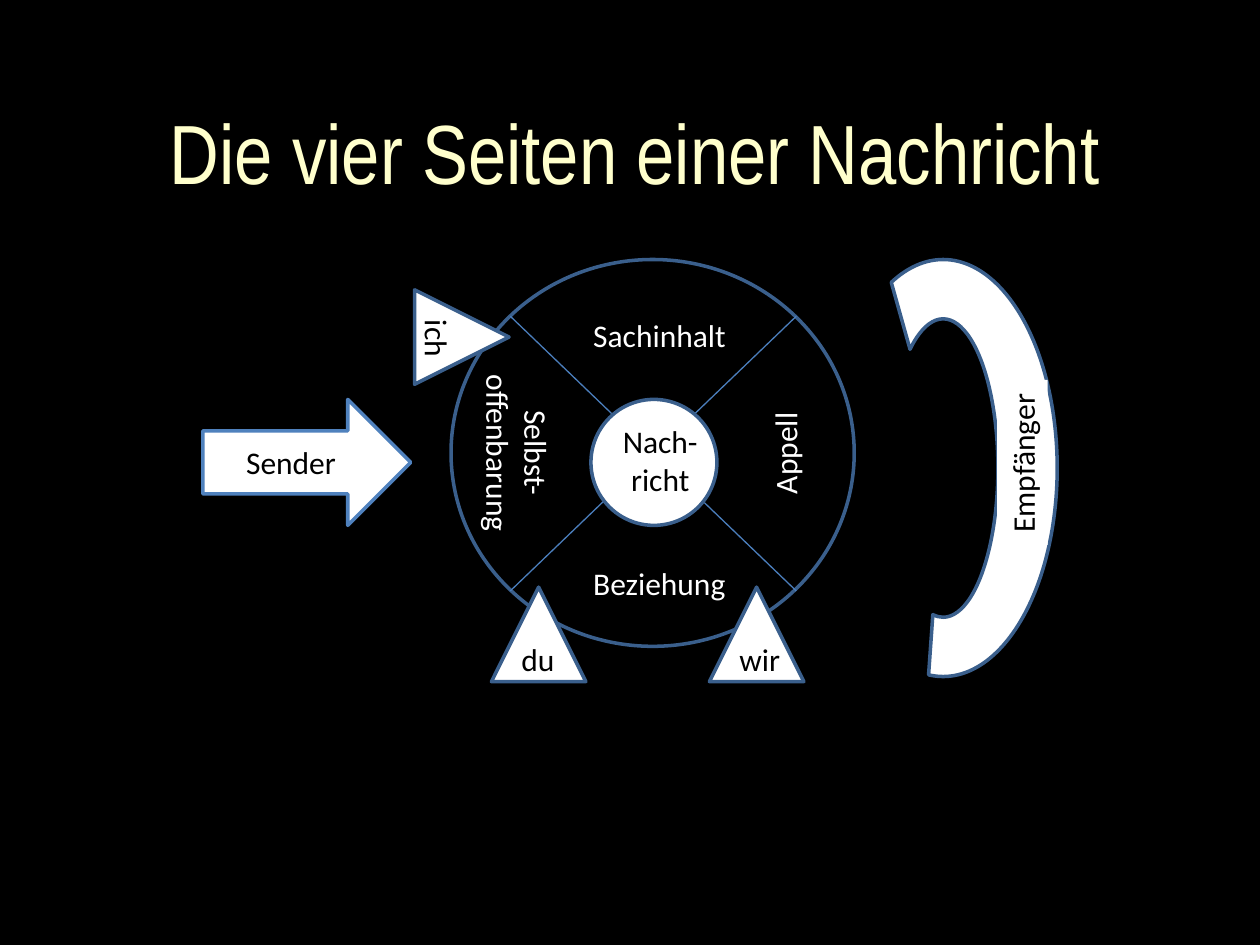
from lxml import etree
from pptx import Presentation
from pptx import util as u
from pptx.dml.color import RGBColor
from pptx.enum import shapes, text
from pptx.oxml import ns

BLACK = RGBColor(0x00, 0x00, 0x00)
WHITE = RGBColor(0xFF, 0xFF, 0xFF)
CREAM = RGBColor(0xFF, 0xFF, 0xCC)
BLUE = RGBColor(0x4F, 0x81, 0xBD)
DARK_BLUE = RGBColor(0x3A, 0x5F, 0x8C)
LINE_BLUE = RGBColor(0x4B, 0x7E, 0xBC)

deck = Presentation()
deck.slide_width, deck.slide_height = u.Inches(10), u.Inches(7.5)
page = deck.slides.add_slide(deck.slide_layouts[6])
page.background.fill.solid()
page.background.fill.fore_color.rgb = BLACK

# Grid of 100 columns by 75 rows
CELL = deck.slide_width / 100
LEFT, CENTER = text.PP_ALIGN.LEFT, text.PP_ALIGN.CENTER


def add_outline(kind, area, fill=WHITE, line=DARK_BLUE, turn=0):
    """Add a preset shape; area is column, row, columns wide, rows high."""
    shape = page.shapes.add_shape(kind, *[round(n * CELL) for n in area])
    shape.shadow.inherit = False
    shape.rotation = turn
    if fill is None:
        shape.fill.background()
    else:
        shape.fill.solid()
        shape.fill.fore_color.rgb = fill
    shape.line.color.rgb = line
    shape.line.width = u.Pt(2)
    return shape


def add_words(lines, area, color, align=LEFT, turn=0, box=None, font="Calibri", size=18):
    """Write lines into box, or into a new text box that fits its text."""
    if box is None:
        box = page.shapes.add_textbox(*[round(n * CELL) for n in area])
        box.rotation = turn
        box.text_frame.word_wrap = False
        box.text_frame.auto_size = text.MSO_AUTO_SIZE.SHAPE_TO_FIT_TEXT
    frame = box.text_frame
    for index, line in enumerate(lines):
        para = frame.add_paragraph() if index else frame.paragraphs[0]
        para.alignment = align
        span = para.add_run()
        span.text = line
        span.font.name, span.font.size = font, u.Pt(size)
        span.font.color.rgb = color
    return box


# Title
title = page.shapes.add_textbox(*[round(n * CELL) for n in (3.3, 6.7, 94.2, 12.5)])
title.text_frame.word_wrap = True
title.text_frame.vertical_anchor = text.MSO_ANCHOR.MIDDLE
add_words(["Die vier Seiten einer Nachricht"], None, CREAM, CENTER,
          box=title, font="Arial Narrow", size=48)
title.text_frame.paragraphs[0].line_spacing = 0.7

# Sender
sender = add_outline(shapes.MSO_SHAPE.RIGHT_ARROW, (16.1, 31.7, 16.5, 10), line=BLUE)
sender.text_frame.vertical_anchor = text.MSO_ANCHOR.MIDDLE
add_words(["Sender"], None, BLACK, CENTER, box=sender)

# Message circle with its two diagonals
add_outline(shapes.MSO_SHAPE.OVAL, (35.8, 20.6, 32, 30.7), fill=None)
west, east, north, south = 40.5, 63.2, 25.1, 46.9
for start, end in (((west, north), (east, south)), ((east, north), (west, south))):
    diagonal = page.shapes.add_connector(
        shapes.MSO_CONNECTOR.STRAIGHT, *[round(n * CELL) for n in start + end])
    diagonal.line.color.rgb = LINE_BLUE
    diagonal.line.width = u.Pt(0.75)
    etree.SubElement(diagonal._element.spPr, ns.qn("a:effectLst"))

# The four sides
for lines, area, align, turn in (
    (["Sachinhalt"], (46.1, 24.6, 12.7, 4), LEFT, 0),
    (["Beziehung"], (46.1, 44.3, 12.7, 4), LEFT, 0),
    (["Appell"], (58, 33.9, 8.6, 4), LEFT, 270),
    (["Selbst-", "offenbarung"], (33.7, 32.4, 14.7, 7.1), CENTER, 90),
):
    add_words(lines, area, WHITE, align, turn)

# Core
add_outline(shapes.MSO_SHAPE.OVAL, (46.9, 31.7, 10, 10))
add_words(["Nach-", "richt"], (48.4, 33, 8, 7.1), BLACK, CENTER)

# Pointers: word, corner of the triangle, area of the word, turn
for word, corner, area, turn in (
    ("ich", (32.9, 23), (32.2, 24.9, 5, 4), 90),
    ("du", (39, 46.6), (40.4, 50.3, 4.7, 4), 0),
    ("wir", (56.3, 46.6), (57.7, 50.3, 5.3, 4), 0),
):
    add_outline(shapes.MSO_SHAPE.FLOWCHART_EXTRACT, corner + (7.5, 7.5), turn=turn)
    add_words([word], area, BLACK, turn=turn)

# Receiver
arc = add_outline(shapes.MSO_SHAPE.BLOCK_ARC, (58.3, 28.1, 33.1, 18.1), turn=90)
for index, value in enumerate((98.63, 2.42, 0.26)):
    arc.adjustments[index] = value
receiver = add_words(["Empfänger"], (74.6, 34.7, 13.1, 4), BLACK, turn=270)
receiver.fill.solid()
receiver.fill.fore_color.rgb = WHITE

deck.save("out.pptx")
